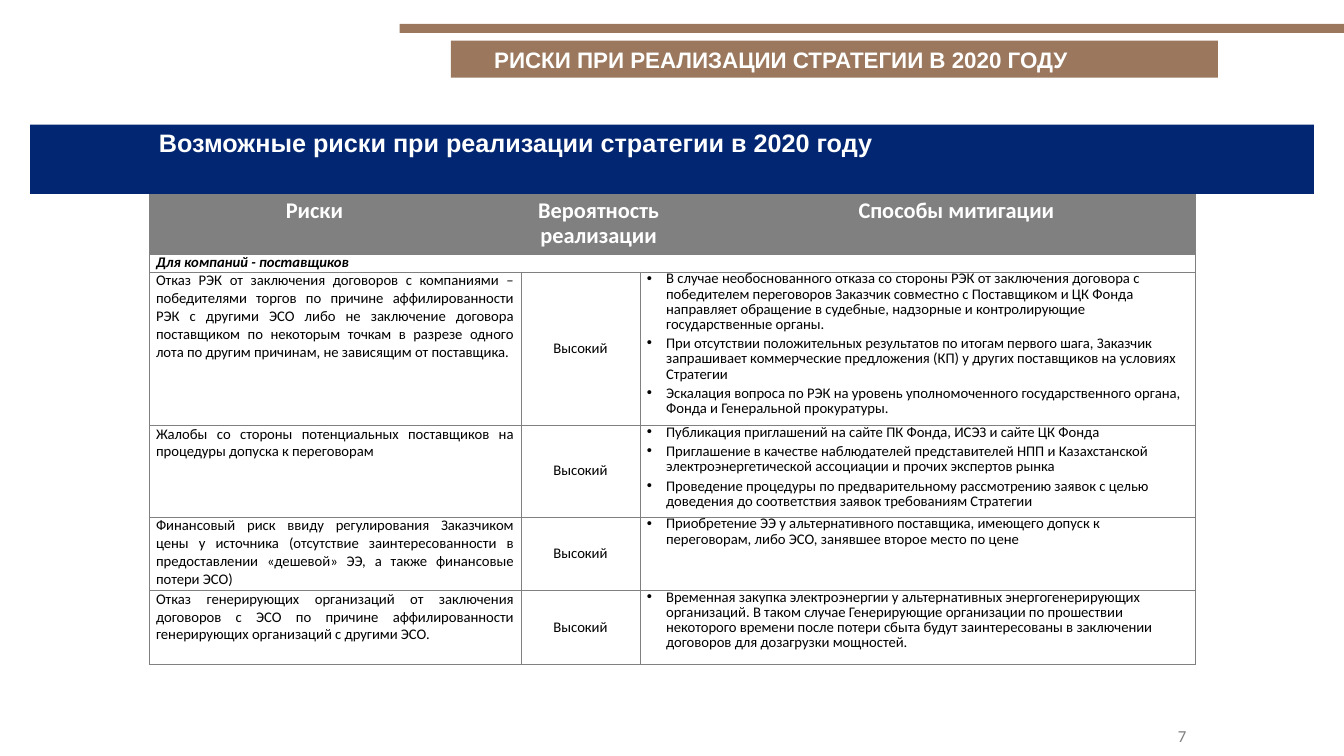
from lxml.etree import SubElement
from pptx import Presentation
from pptx.dml.color import RGBColor
from pptx.enum.shapes import MSO_SHAPE
from pptx.enum.text import MSO_ANCHOR, MSO_AUTO_SIZE, PP_ALIGN
from pptx.oxml.ns import qn
from pptx.util import Pt

COLORS = {"navy": "022671", "brown": "9B785D", "gray": "808080", "white": "FFFFFF", "black": "000000"}
COLUMN_WIDTHS = [236.2, 29.5, 85, 55.4, 341.3]
ROW_HEIGHTS = [42.5, 13, 109.5, 65.5, 52.5, 52.5]
RISKS = [
    ("Отказ РЭК от заключения договоров с компаниями – победителями торгов по причине аффилированности РЭК "
     "с другими ЭСО либо не заключение договора поставщиком по некоторым точкам в разрезе одного лота по "
     "другим причинам, не зависящим от поставщика.",
     "Высокий",
     ["В случае необоснованного отказа со стороны РЭК от заключения договора с победителем переговоров Заказчик "
      "совместно с Поставщиком и ЦК Фонда направляет обращение в судебные, надзорные и контролирующие "
      "государственные органы.",
      "При отсутствии положительных результатов по итогам первого шага, Заказчик запрашивает коммерческие "
      "предложения (КП) у других поставщиков на условиях Стратегии",
      "Эскалация вопроса по РЭК на уровень уполномоченного государственного органа, Фонда и Генеральной "
      "прокуратуры."]),
    ("Жалобы со стороны потенциальных поставщиков на процедуры допуска к переговорам",
     "Высокий",
     ["Публикация приглашений на сайте ПК Фонда, ИСЭЗ и сайте ЦК Фонда",
      "Приглашение в качестве наблюдателей представителей НПП и Казахстанской электроэнергетической ассоциации "
      "и прочих экспертов рынка",
      "Проведение процедуры по предварительному рассмотрению заявок с целью доведения до соответствия заявок "
      "требованиям Стратегии"]),
    ("Финансовый риск ввиду регулирования Заказчиком цены у источника (отсутствие заинтересованности в "
     "предоставлении «дешевой» ЭЭ, а также финансовые потери ЭСО)",
     "Высокий",
     ["Приобретение ЭЭ у альтернативного поставщика, имеющего допуск к переговорам, либо ЭСО, занявшее второе "
      "место по цене"]),
    ("Отказ генерирующих организаций от заключения договоров с ЭСО по причине аффилированности генерирующих "
     "организаций с другими ЭСО.",
     "Высокий",
     ["Временная закупка электроэнергии у альтернативных энергогенерирующих организаций. В таком случае "
      "Генерирующие организации по прошествии некоторого времени после потери сбыта будут заинтересованы в "
      "заключении договоров для дозагрузки мощностей."]),
]


class RiskSlide:
    """Draws styled elements on the current slide."""

    def __init__(self, slide):
        self.slide = slide

    def color(self, name):
        return RGBColor.from_string(COLORS[name])

    def paint(self, target, name):
        target.fill.solid()
        target.fill.fore_color.rgb = self.color(name)

    def bar(self, left, top, width, height, color):
        bar = self.slide.shapes.add_shape(MSO_SHAPE.RECTANGLE, Pt(left), Pt(top), Pt(width), Pt(height))
        bar.shadow.inherit = False
        bar.line.fill.background()
        self.paint(bar, color)

    def set_text(self, frame, texts, size, color="black", font="Calibri", align=PP_ALIGN.LEFT,
                 bold=False, italic=False, spacing=1.0, bullets=False):
        for index, text in enumerate(texts):
            paragraph = frame.paragraphs[0] if index == 0 else frame.add_paragraph()
            paragraph.text = text
            paragraph.alignment = align
            paragraph.line_spacing = spacing
            paragraph.space_before = Pt(3 if index else 0)
            if bullets:
                properties = paragraph._p.get_or_add_pPr()
                properties.set("marL", str(Pt(13.7)))
                properties.set("indent", str(-Pt(13.7)))
                SubElement(properties, qn("a:buFont"), typeface="Arial")
                SubElement(properties, qn("a:buChar"), char="•")
            style = paragraph.font
            style.name, style.size, style.bold, style.italic = font, Pt(size), bold, italic
            style.color.rgb = self.color(color)

    def title(self, text, left, top, width, height):
        title = self.slide.shapes.title
        title.left, title.top, title.width, title.height = Pt(left), Pt(top), Pt(width), Pt(height)
        self.paint(title, "brown")
        frame = title.text_frame
        frame.auto_size = MSO_AUTO_SIZE.NONE
        frame.vertical_anchor = MSO_ANCHOR.TOP
        frame.margin_left = Pt(31)
        self.set_text(frame, [text], 16, "white", "Arial", bold=True)

    def label(self, text, left, top, width, height, anchor=MSO_ANCHOR.TOP, **style):
        frame = self.slide.shapes.add_textbox(Pt(left), Pt(top), Pt(width), Pt(height)).text_frame
        frame.word_wrap = True
        frame.vertical_anchor = anchor
        self.set_text(frame, [text], **style)

    def table(self, left, top):
        table = self.slide.shapes.add_table(
            len(ROW_HEIGHTS), len(COLUMN_WIDTHS), Pt(left), Pt(top),
            Pt(sum(COLUMN_WIDTHS)), Pt(sum(ROW_HEIGHTS))).table
        table.first_row = table.horz_banding = False
        for column, width in zip(table.columns, COLUMN_WIDTHS):
            column.width = Pt(width)
        for row, height in zip(table.rows, ROW_HEIGHTS):
            row.height = Pt(height)
        for cell in table.iter_cells():
            self.border(cell)
        return table

    def border(self, cell):
        properties = cell._tc.get_or_add_tcPr()
        for side in ("lnL", "lnR", "lnT", "lnB"):
            line = SubElement(properties, qn(f"a:{side}"), w=str(Pt(0.25)))
            fill = SubElement(line, qn("a:solidFill"))
            SubElement(fill, qn("a:srgbClr"), val=COLORS["gray"])
        cell.fill.background()

    def cell(self, table, row, first, last, texts, margins=(5, 0), fill=None,
             anchor=MSO_ANCHOR.TOP, **style):
        cell = table.cell(row, first)
        if last > first:
            cell.merge(table.cell(row, last))
        cell.margin_left = cell.margin_right = Pt(margins[0])
        cell.margin_top = cell.margin_bottom = Pt(margins[1])
        cell.vertical_anchor = anchor
        if fill:
            self.paint(cell, fill)
        self.set_text(cell.text_frame, texts, **style)


def main():
    deck = Presentation()
    deck.slide_width, deck.slide_height = Pt(960), Pt(540)
    page = RiskSlide(deck.slides.add_slide(deck.slide_layouts[5]))
    page.bar(21.5, 89, 917, 49.5, "navy")
    page.bar(285.5, 17, 674.5, 6.5, "brown")
    page.title("РИСКИ ПРИ РЕАЛИЗАЦИИ СТРАТЕГИИ В 2020 ГОДУ", 322, 29, 548, 26.5)
    page.label("Возможные риски при реализации стратегии в 2020 году", 106.5, 87.5, 747.5, 29,
               size=18, color="white", font="Arial", bold=True)
    page.label("7", 679, 511.5, 175.5, 28.5, MSO_ANCHOR.MIDDLE, size=12, color="gray", align=PP_ALIGN.RIGHT)

    risks = page.table(106.5, 138.7)
    headers = [(0, 0, "Риски"), (1, 3, "Вероятность реализации"), (4, 4, "Способы митигации")]
    for first, last, header in headers:
        page.cell(risks, 0, first, last, [header], (3, 3.6), "gray", size=16, color="white",
                  align=PP_ALIGN.CENTER, bold=True, spacing=0.9)
    page.cell(risks, 1, 0, 4, ["Для компаний - поставщиков"], size=10.5, bold=True, italic=True)
    for row, (risk, likelihood, measures) in enumerate(RISKS, start=2):
        page.cell(risks, row, 0, 1, [risk], size=10.5, align=PP_ALIGN.JUSTIFY)
        page.cell(risks, row, 2, 2, [likelihood], anchor=MSO_ANCHOR.MIDDLE, size=10.5, align=PP_ALIGN.CENTER)
        page.cell(risks, row, 3, 4, measures, size=10.5, spacing=0.85, bullets=True)
    deck.save("out.pptx")


if __name__ == "__main__":
    main()
